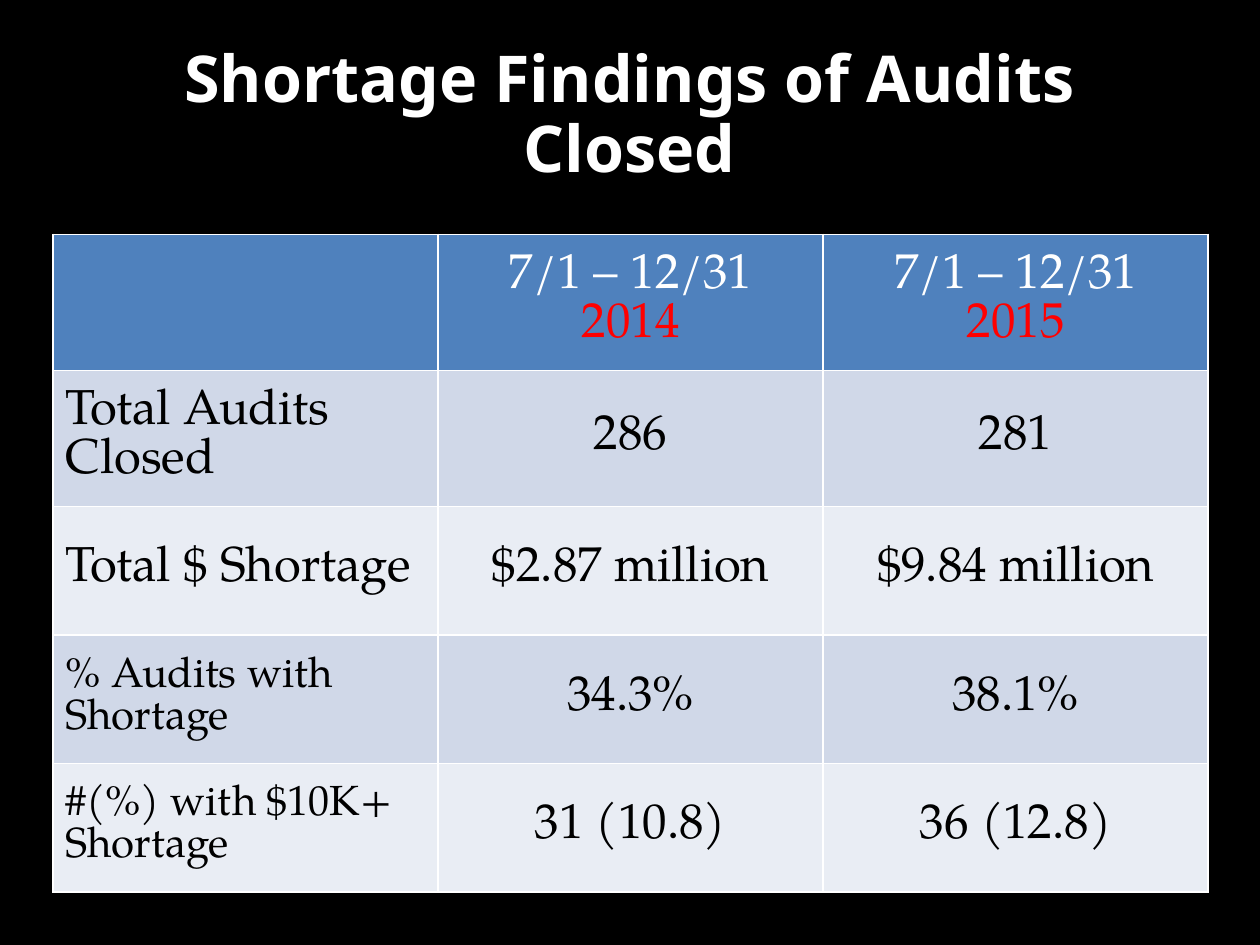
from lxml import etree
from pptx import Presentation, util as u
from pptx.dml.color import RGBColor
from pptx.enum import text
from pptx.oxml import ns

WIDTH, HEIGHT = u.Inches(10), u.Inches(7.5)
WHITE, BLACK, RED = "FFFFFF", "000000", "FF0000"
HEADER_FILL, BAND_FILLS = "4F81BD", ("D0D8E8", "E9EDF4")
PERIOD, YEARS = "7/1 – 12/31", ("2014", "2015")
FINDINGS = [  # label, label size, values by year
    ("Total Audits Closed", 28, "286", "281"),
    ("Total $ Shortage", 28, "$2.87 million", "$9.84 million"),
    ("% Audits with Shortage", 24, "34.3%", "38.1%"),
    ("#(%) with $10K+ Shortage", 24, "31 (10.8)", "36 (12.8)"),
]
ROW_HEIGHTS = (1.08, 1.08, 1.02, 1.02, 1.02)


def color(value):
    return RGBColor.from_string(value)


def style(paragraph, name, size, ink, centered=True):
    font = paragraph.font
    font.name, font.size = name, u.Pt(size)
    font.color.rgb = color(ink)
    if centered:
        paragraph.alignment = text.PP_ALIGN.CENTER


def add_title(slide, wording):
    shape = slide.shapes.add_textbox(
        int(WIDTH * 0.05), int(HEIGHT * 0.04), int(WIDTH * 0.9), u.Inches(1.25))
    frame = shape.text_frame
    frame.word_wrap = True
    frame.vertical_anchor = text.MSO_ANCHOR.MIDDLE
    paragraph = frame.paragraphs[0]
    paragraph.text = wording
    paragraph.line_spacing = 0.9
    style(paragraph, "Noto Sans", 36.9, WHITE)
    paragraph.font.bold = True


def add_borders(cell, ink):
    properties = cell._tc.get_or_add_tcPr()
    for side in "LRTB":
        line = etree.SubElement(properties, ns.qn(f"a:ln{side}"), w=str(u.Pt(1)))
        fill = etree.SubElement(line, ns.qn("a:solidFill"))
        etree.SubElement(fill, ns.qn("a:srgbClr"), val=ink)


def fill_cell(cell, fill, lines, size=28, centered=True):
    """Format a cell and write its lines, given as (wording, colour) pairs."""
    add_borders(cell, WHITE)
    cell.fill.solid()
    cell.fill.fore_color.rgb = color(fill)
    cell.vertical_anchor = text.MSO_ANCHOR.MIDDLE
    cell.text = "\n".join(wording for wording, _ in lines)
    for paragraph, (_, ink) in zip(cell.text_frame.paragraphs, lines):
        style(paragraph, "TeX Gyre Pagella", size, ink, centered)
        paragraph.line_spacing = u.Pt(size)


def add_findings_table(slide):
    table = slide.shapes.add_table(
        len(FINDINGS) + 1, len(YEARS) + 1, u.Inches(0.42), u.Inches(1.86),
        u.Inches(9.17), u.Inches(sum(ROW_HEIGHTS))).table
    for row, height in zip(table.rows, ROW_HEIGHTS):
        row.height = u.Inches(height)

    fill_cell(table.cell(0, 0), HEADER_FILL, [("", WHITE)])
    for column, year in enumerate(YEARS, 1):
        fill_cell(table.cell(0, column), HEADER_FILL, [(PERIOD, WHITE), (year, RED)])

    for row, (label, size, *values) in enumerate(FINDINGS, 1):
        fill = BAND_FILLS[(row - 1) % 2]
        fill_cell(table.cell(row, 0), fill, [(label, BLACK)], size, centered=False)
        for column, value in enumerate(values, 1):
            fill_cell(table.cell(row, column), fill, [(value, BLACK)])


def main():
    presentation = Presentation()
    presentation.slide_width, presentation.slide_height = WIDTH, HEIGHT
    slide = presentation.slides.add_slide(presentation.slide_layouts[6])
    slide.background.fill.solid()
    slide.background.fill.fore_color.rgb = color(BLACK)
    add_title(slide, "Shortage Findings of Audits Closed")
    add_findings_table(slide)
    presentation.save("out.pptx")


if __name__ == "__main__":
    main()
